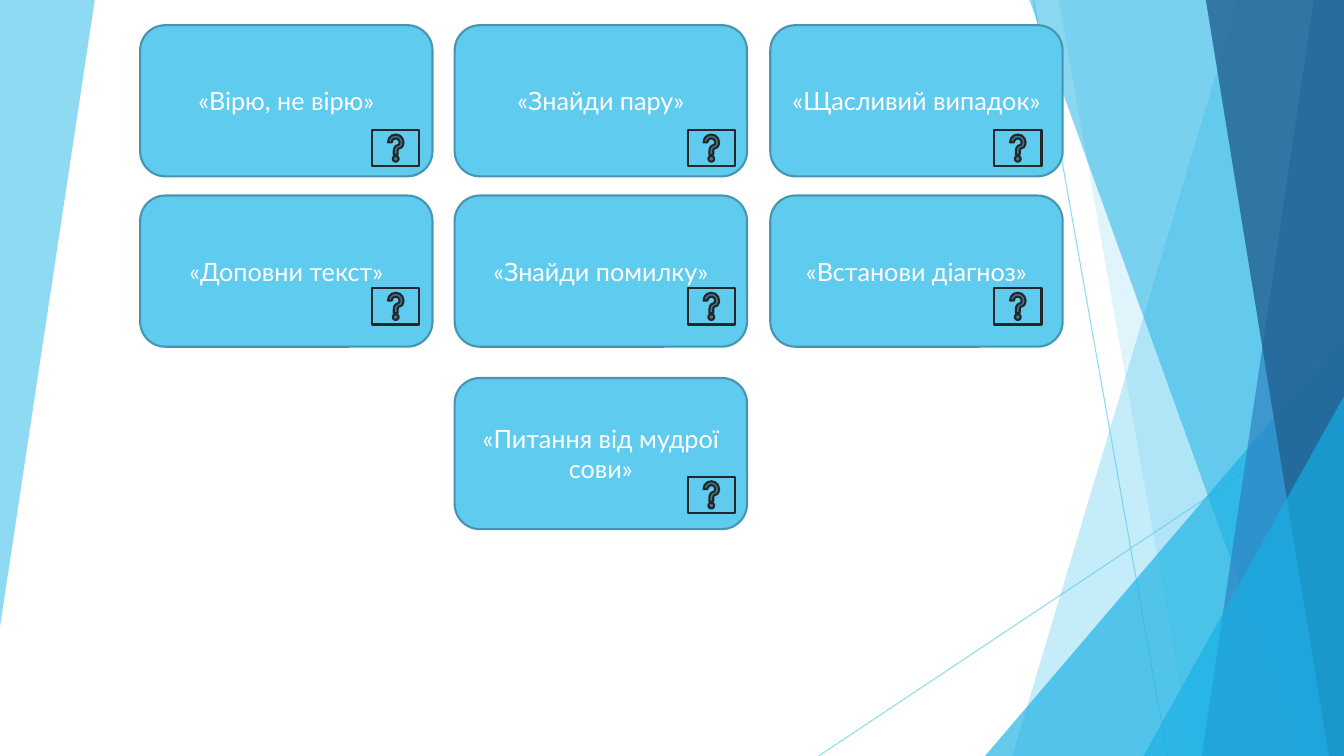
import pptx
import pptx.dml.color
import pptx.enum.shapes
import pptx.enum.text
import pptx.oxml
import pptx.oxml.ns
import pptx.util

Inches = pptx.util.Inches
Pt = pptx.util.Pt
RGBColor = pptx.dml.color.RGBColor
MSO_SHAPE = pptx.enum.shapes.MSO_SHAPE

SKY = RGBColor(0x5F, 0xCB, 0xEF)
CYAN = RGBColor(0x17, 0xB0, 0xE4)
BLUE = RGBColor(0x2E, 0x83, 0xC3)
NAVY = RGBColor(0x22, 0x62, 0x92)
CARD_EDGE = RGBColor(0x46, 0x96, 0xB1)
BUTTON_EDGE = RGBColor(0x26, 0x26, 0x26)
WHITE = RGBColor(0xFF, 0xFF, 0xFF)

SLIDE_W, SLIDE_H = 13.33, 7.5
FONT = "Lato"
CARD_W, CARD_H = 2.9, 1.5
BUTTON_W, BUTTON_H = 0.47, 0.36

# Card offset in the grid, then button offset inside the card
COLUMNS = [(0, 2.3), (3.12, 2.31), (6.25, 2.22)]
ROWS = [(0, 1.04), (1.69, 0.92), (3.5, 0.98)]
CARDS = [
    (0, 0, "«Вірю, не вірю»"),
    (0, 1, "«Знайди пару»"),
    (0, 2, "«Щасливий випадок»"),
    (1, 0, "«Доповни текст»"),
    (1, 1, "«Знайди помилку»"),
    (1, 2, "«Встанови діагноз»"),
    (2, 1, "«Питання від мудрої сови»"),
]


def set_opacity(parent, percent):
    """Make the solid colour found under an XML element translucent."""
    color = parent.find(".//" + pptx.oxml.ns.qn("a:srgbClr"))
    ns = pptx.oxml.ns.nsdecls("a")
    color.append(pptx.oxml.parse_xml(f'<a:alpha {ns} val="{percent * 1000}"/>'))


def paint_facet(sp, color, opacity):
    sp.shadow.inherit = False
    sp.fill.solid()
    sp.fill.fore_color.rgb = color
    set_opacity(sp.fill._xPr, opacity)
    sp.line.fill.background()


def add_facet(shapes, points, color, opacity):
    """Draw a translucent polygon through points given in inches."""
    corners = [(Inches(x), Inches(y)) for x, y in points]
    builder = shapes.build_freeform(*corners[0])
    builder.add_line_segments(corners[1:], close=True)
    paint_facet(builder.convert_to_shape(), color, opacity)


def add_corner_triangle(shapes, right, bottom, width, height):
    """Draw a right triangle standing in the lower right corner."""
    sp = shapes.add_shape(MSO_SHAPE.ISOSCELES_TRIANGLE,
                          Inches(right - width), Inches(bottom - height),
                          Inches(width), Inches(height))
    sp.adjustments[0] = 1
    paint_facet(sp, CYAN, 66)


def add_thin_line(shapes, x1, y1, x2, y2):
    line = shapes.add_connector(pptx.enum.shapes.MSO_CONNECTOR.STRAIGHT,
                                Inches(x1), Inches(y1), Inches(x2), Inches(y2))
    line.line.color.rgb = SKY
    line.line.width = Pt(0.75)
    properties = line._element.spPr
    set_opacity(properties, 70)
    ns = pptx.oxml.ns.nsdecls("a")
    properties.append(pptx.oxml.parse_xml(f"<a:effectLst {ns}/>"))


def add_backdrop(shapes, left, top, width, height):
    right, bottom = left + width, top + height

    def add_right_facet(top_inset, bottom_inset, color, opacity):
        points = [(right - top_inset, top), (right, top),
                  (right, bottom), (right - bottom_inset, bottom)]
        add_facet(shapes, points, color, opacity)

    add_facet(shapes, [(left, top), (left + 0.94, top), (left, top + 6.22)], SKY, 70)
    add_thin_line(shapes, right - 3.08, top, right - 1.75, bottom)
    add_thin_line(shapes, right, top + 4.03, right - 5.21, bottom)
    add_right_facet(1.05, 3.29, SKY, 36)
    add_right_facet(2.83, 1.5, SKY, 20)
    add_corner_triangle(shapes, right, bottom, 3.56, 4.17)
    add_right_facet(3.12, 0.42, CYAN, 50)
    add_right_facet(0.3, 1.41, BLUE, 70)
    add_right_facet(1.37, 0.15, NAVY, 80)
    add_corner_triangle(shapes, right, bottom, 1.99, 3.57)


def add_outlined_shape(shapes, kind, left, top, width, height, edge):
    sp = shapes.add_shape(kind, Inches(left), Inches(top),
                          Inches(width), Inches(height))
    sp.shadow.inherit = False
    sp.fill.solid()
    sp.fill.fore_color.rgb = SKY
    sp.line.color.rgb = edge
    sp.line.width = Pt(1.5)
    return sp


def add_card(shapes, left, top, text):
    sp = add_outlined_shape(shapes, MSO_SHAPE.ROUNDED_RECTANGLE,
                            left, top, CARD_W, CARD_H, CARD_EDGE)
    tf = sp.text_frame
    tf.word_wrap = True
    tf.vertical_anchor = pptx.enum.text.MSO_ANCHOR.MIDDLE
    p = tf.paragraphs[0]
    p.alignment = pptx.enum.text.PP_ALIGN.CENTER
    r = p.add_run()
    r.text = text
    r.font.name = FONT
    r.font.size = Pt(18)
    r.font.color.rgb = WHITE


def add_card_grid(shapes, left, top):
    """Place the game cards, then a help button on each of them."""
    for row, column, text in CARDS:
        add_card(shapes, left + COLUMNS[column][0], top + ROWS[row][0], text)
    for row, column, _ in CARDS:
        add_outlined_shape(shapes, MSO_SHAPE.ACTION_BUTTON_HELP,
                           left + sum(COLUMNS[column]), top + sum(ROWS[row]),
                           BUTTON_W, BUTTON_H, BUTTON_EDGE)


def main():
    prs = pptx.Presentation()
    prs.slide_width = Inches(SLIDE_W)
    prs.slide_height = Inches(SLIDE_H)
    s = prs.slides.add_slide(prs.slide_layouts[6])
    add_backdrop(s.shapes, 0, 0, SLIDE_W, SLIDE_H)
    add_card_grid(s.shapes, 1.39, 0.25)
    prs.save("out.pptx")


if __name__ == "__main__":
    main()
